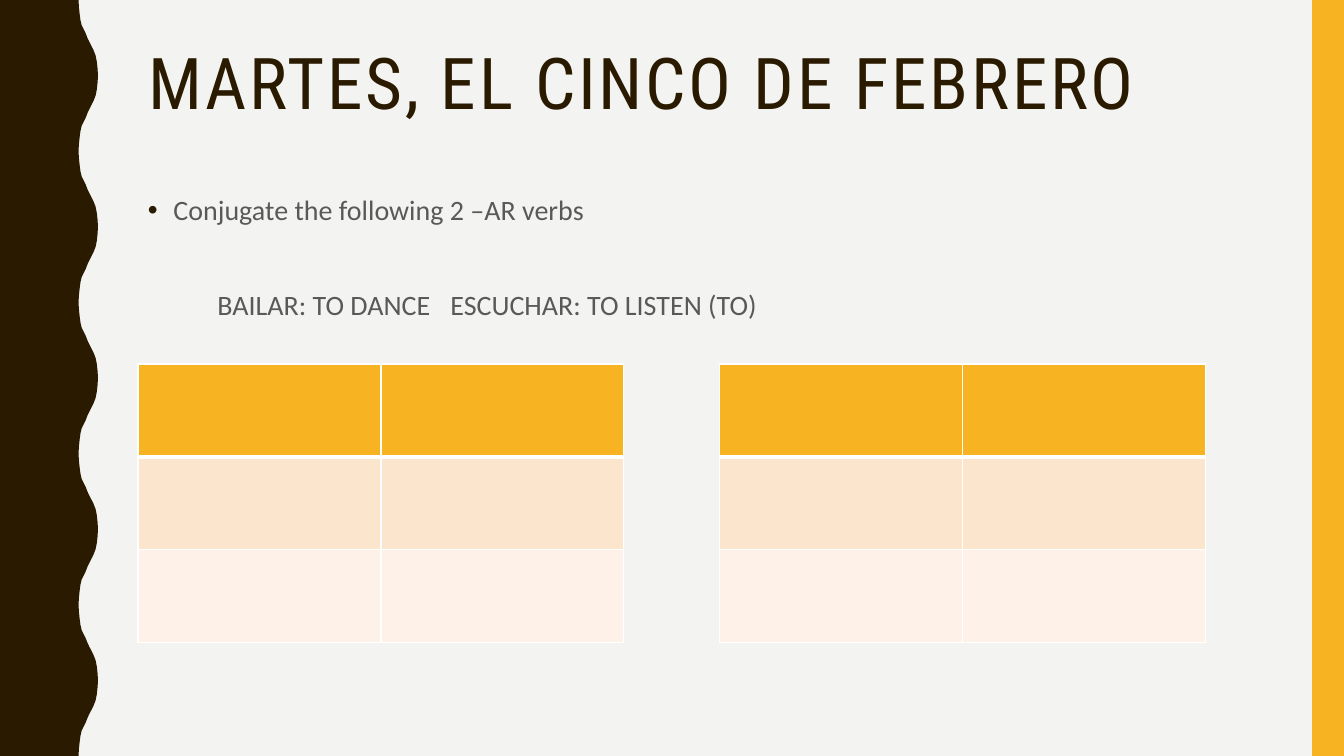
import pptx
import pptx.dml.color
import pptx.enum.shapes
import pptx.enum.text
import pptx.oxml
import pptx.oxml.ns
import pptx.util
from pptx.util import Cm

NS = pptx.oxml.ns.nsdecls("a")
COLORS = {
    "paper": "F3F3F2", "brown": "2A1A00", "gold": "F8B323", "gray": "595959",
    "peach": "FCE5CD", "cream": "FEF2E8", "white": "FFFFFF",
}
HALF_WAVE = [
    (1.98, 0), (1.99, 0.18), (2.01, 0.36), (2.03, 0.51), (2.06, 0.64),
    (2.11, 0.74), (2.16, 0.84), (2.21, 0.97), (2.26, 1.07), (2.31, 1.17),
    (2.36, 1.27), (2.41, 1.4), (2.44, 1.55), (2.46, 1.73), (2.47, 1.9),
]
HALF_WAVES = 10
SLIDE_W, SLIDE_H = 33.87, 19.05
LEFT, CONTENT_W = 3.48, 28.27


class VerbSlide:
    """Builds the verb practice slide in one consistent style."""

    def __init__(self, deck):
        self.slide = deck.slides.add_slide(deck.slide_layouts[5])
        self.paint(self.slide.background.fill, "paper")

    def paint(self, fill, color):
        fill.solid()
        fill.fore_color.rgb = pptx.dml.color.RGBColor.from_string(COLORS[color])

    def finish(self, shape, color):
        self.paint(shape.fill, color)
        shape.line.fill.background()
        shape.shadow.inherit = False

    def wavy_edge(self):
        half = SLIDE_H / HALF_WAVES
        edge = []
        for i in range(HALF_WAVES):
            if i % 2:
                edge += [(x, (i + 1) * half - y) for x, y in reversed(HALF_WAVE)]
            else:
                edge += [(x, i * half + y) for x, y in HALF_WAVE]
        outline = self.slide.shapes.build_freeform(0, 0)
        corners = edge + [(HALF_WAVE[0][0], SLIDE_H), (0, SLIDE_H)]
        outline.add_line_segments([(Cm(x), Cm(y)) for x, y in corners], close=True)
        self.finish(outline.convert_to_shape(), "brown")

    def side_bar(self, left):
        bar = self.slide.shapes.add_shape(
            pptx.enum.shapes.MSO_SHAPE.RECTANGLE,
            Cm(left), 0, Cm(SLIDE_W - left), Cm(SLIDE_H))
        self.finish(bar, "gold")

    def frame(self, shape, top, height):
        shape.left, shape.top = Cm(LEFT), Cm(top)
        shape.width, shape.height = Cm(CONTENT_W), Cm(height)
        shape.text_frame.word_wrap = True
        shape.text_frame.auto_size = pptx.enum.text.MSO_AUTO_SIZE.NONE
        shape.text_frame.vertical_anchor = pptx.enum.text.MSO_ANCHOR.TOP
        return shape.text_frame

    def style(self, paragraph, font, size, color, spacing):
        paragraph.alignment = pptx.enum.text.PP_ALIGN.LEFT
        paragraph.line_spacing = spacing
        for run in paragraph.runs:
            run.font.name = font
            run.font.size = pptx.util.Pt(size)
            self.paint(run.font.fill, color)

    def title(self, text):
        heading = self.frame(self.slide.shapes.title, 1.07, 4.14)
        heading.text = text
        self.style(heading.paragraphs[0], "Roboto Condensed", 51, "brown", 0.9)
        heading.paragraphs[0].runs[0].font._element.set("spc", "200")

    def body(self, instruction, verbs):
        box = self.slide.shapes.add_textbox(0, 0, Cm(1), Cm(1))
        content = self.frame(box, 4.65, 11.68)
        content.text = instruction + "\n" + "\t".join(verbs)
        task, verb_line = content.paragraphs
        for paragraph, gap in ((task, 7), (verb_line, 41)):
            self.style(paragraph, "Calibri", 20, "gray", 1.1)
            paragraph.space_before = pptx.util.Pt(gap)
        self.indent(task, 0.64, -0.64, [
            f'<a:buClr {NS}><a:srgbClr val="{COLORS["brown"]}"/></a:buClr>',
            f'<a:buFont {NS} typeface="Arial"/>',
            f'<a:buChar {NS} char="•"/>'])
        self.indent(verb_line, 0, 1.75, [
            f'<a:buNone {NS}/>',
            f'<a:tabLst {NS}><a:tab pos="{Cm(13.18)}" algn="l"/></a:tabLst>'])

    def indent(self, paragraph, margin, first_line, details):
        properties = paragraph._p.get_or_add_pPr()
        properties.set("marL", str(Cm(margin)))
        properties.set("indent", str(Cm(first_line)))
        for detail in details:
            properties.append(pptx.oxml.parse_xml(detail))

    def border(self, cell, side, width):
        cell._tc.get_or_add_tcPr().append(pptx.oxml.parse_xml(
            f'<a:ln{side} {NS} w="{pptx.util.Pt(width)}"><a:solidFill>'
            f'<a:srgbClr val="{COLORS["white"]}"/></a:solidFill></a:ln{side}>'))

    def conjugation_table(self, left):
        row_colors = ["gold", "peach", "cream"]
        grid = self.slide.shapes.add_table(
            len(row_colors), 2, Cm(left), Cm(9.17), Cm(12.24), Cm(7.02)).table
        for r, color in enumerate(row_colors):
            for cell in grid.rows[r].cells:
                for side in "LRTB":
                    under_header = (r, side) in ((0, "B"), (1, "T"))
                    self.border(cell, side, 3 if under_header else 1)
                self.paint(cell.fill, color)


def main():
    deck = pptx.Presentation()
    deck.slide_width, deck.slide_height = Cm(SLIDE_W), Cm(SLIDE_H)
    page = VerbSlide(deck)
    page.wavy_edge()
    page.side_bar(33.07)
    page.title("MARTES, EL CINCO DE FEBRERO")
    page.body("Conjugate the following 2 –AR verbs",
              ["BAILAR: TO DANCE", "ESCUCHAR: TO LISTEN (TO)"])
    for left in (LEFT, 18.14):
        page.conjugation_table(left)
    deck.save("out.pptx")


if __name__ == "__main__":
    main()
